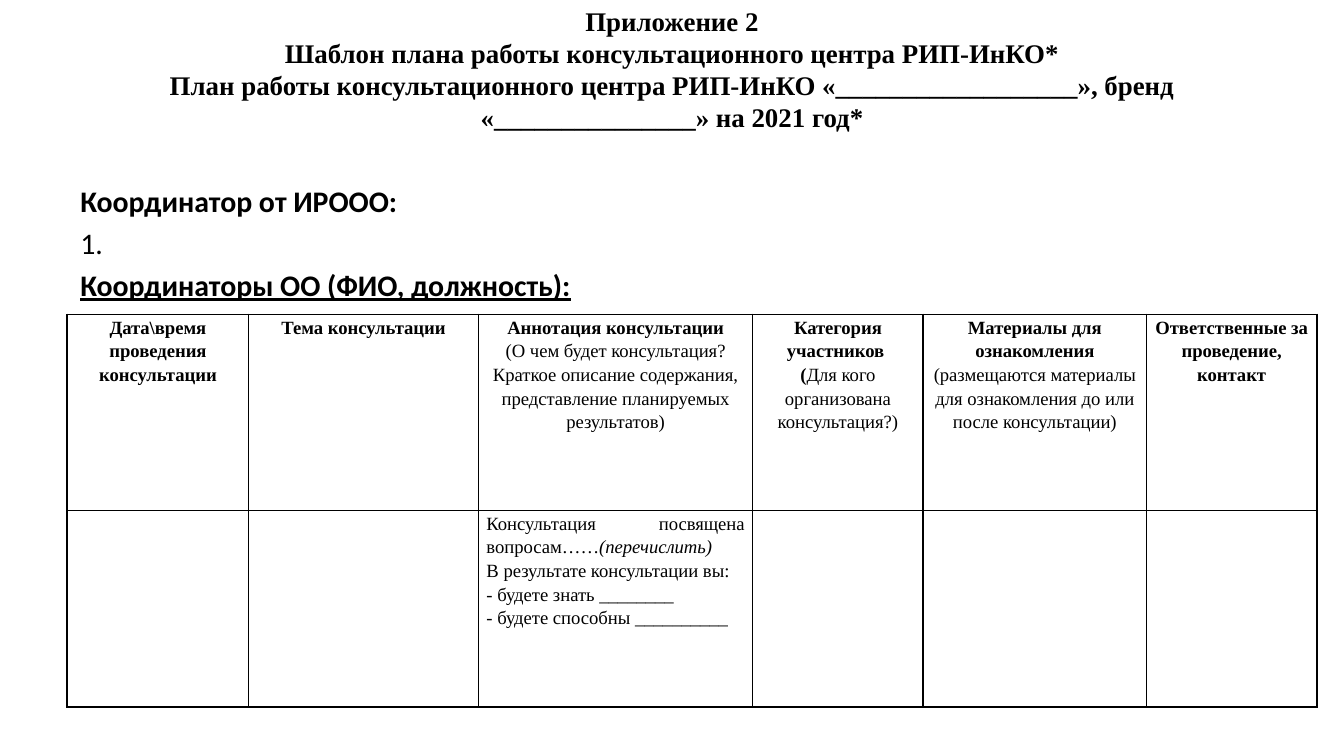
from lxml.etree import SubElement
from pptx import Presentation
from pptx.dml.color import RGBColor
from pptx.enum.text import MSO_ANCHOR, MSO_AUTO_SIZE, PP_ALIGN
from pptx.oxml.ns import qn
from pptx.util import Inches, Pt

SLIDE_WIDTH = 10
SLIDE_HEIGHT = SLIDE_WIDTH * 9 / 16
COLORS = {"text": "000000", "border": "000000"}
BOLD = {"bold": True}
PLAIN = {"bold": False}
ITALIC = {"bold": False, "italic": True}
TITLE_FONT = {"name": "Times New Roman", "size": Pt(14.4), "bold": True}
COORDINATOR_FONT = {"name": "Calibri", "size": Pt(16)}
TABLE_FONT = {"name": "Times New Roman", "size": Pt(10)}

TITLE_LINES = [
    "Приложение 2",
    " Шаблон плана работы консультационного центра РИП-ИнКО* ",
    "План работы консультационного центра РИП-ИнКО «__________________», "
    "бренд «_______________» на 2021 год*",
]
COORDINATORS = [
    [("Координатор от ИРООО:", BOLD)],
    [("1.", PLAIN)],
    [("Координаторы ОО (ФИО, должность):", {"bold": True, "underline": True})],
]
COLUMN_WIDTHS = [1.35, 1.71, 2.04, 1.27, 1.66, 1.27]
ROW_HEIGHT = 1.46
HEADERS = [
    [[("Дата\\время проведения консультации", BOLD)]],
    [[("Тема консультации", BOLD)]],
    [[("Аннотация консультации", BOLD)],
     [("(О чем будет консультация? Краткое описание содержания, "
       "представление планируемых результатов)", PLAIN)]],
    [[("Категория участников ", BOLD)],
     [("(", BOLD), ("Для кого организована консультация?)", PLAIN)]],
    [[("Материалы для ознакомления", BOLD)],
     [("(размещаются материалы для ознакомления до или после консультации)", PLAIN)]],
    [[("Ответственные за проведение, контакт", BOLD)]],
]
ANNOTATION = [
    [("Консультация посвящена вопросам……", PLAIN), ("(перечислить)", ITALIC)],
    [("В результате консультации вы:", PLAIN)],
    [("- будете знать ________", PLAIN)],
    [("- будете способны __________", PLAIN)],
]
ANNOTATION_COLUMN = 2


def set_all(target, values):
    for attribute, value in values.items():
        setattr(target, attribute, value)


def add_run(paragraph, text, font_format):
    run = paragraph.add_run()
    run.text = text
    set_all(run.font, font_format)
    run.font.color.rgb = RGBColor.from_string(COLORS["text"])


def write_paragraphs(frame, paragraphs, base_font, paragraph_format):
    for index, runs in enumerate(paragraphs):
        paragraph = frame.add_paragraph() if index else frame.paragraphs[0]
        set_all(paragraph, paragraph_format)
        for text, font_format in runs:
            add_run(paragraph, text, {**base_font, **font_format})


def write_title(title):
    set_all(title, {"left": Inches(0.5), "top": Inches(0.53),
                    "width": Inches(9), "height": Inches(0.63)})
    frame = title.text_frame
    set_all(frame, {"word_wrap": True, "auto_size": MSO_AUTO_SIZE.NONE,
                    "vertical_anchor": MSO_ANCHOR.MIDDLE})
    paragraph = frame.paragraphs[0]
    paragraph.alignment = PP_ALIGN.CENTER
    for line in TITLE_LINES:
        add_run(paragraph, line, TITLE_FONT)
        paragraph.add_line_break()
    # The tall closing line lifts the heading above the coordinators.
    SubElement(paragraph._p, qn("a:endParaRPr"), sz="4000")


def add_coordinators(slide):
    box = slide.shapes.add_textbox(Inches(0.5), Inches(1.31), Inches(9), Inches(3.71))
    box.text_frame.word_wrap = True
    write_paragraphs(box.text_frame, COORDINATORS, COORDINATOR_FONT,
                     {"space_before": Pt(3.2)})


def draw_borders(cell):
    properties = cell._tc.get_or_add_tcPr()
    for position, side in enumerate(("a:lnL", "a:lnR", "a:lnT", "a:lnB")):
        line = SubElement(properties, qn(side), w=str(Pt(1)))
        fill = SubElement(line, qn("a:solidFill"))
        SubElement(fill, qn("a:srgbClr"), val=COLORS["border"])
        properties.remove(line)
        properties.insert(position, line)


def add_plan_table(slide):
    table = slide.shapes.add_table(
        2, len(COLUMN_WIDTHS), Inches(0.5), Inches(2.34),
        Inches(sum(COLUMN_WIDTHS)), Inches(2 * ROW_HEIGHT)).table
    set_all(table, {"first_row": False, "horz_banding": False})
    for column, width in zip(table.columns, COLUMN_WIDTHS):
        column.width = Inches(width)
    for row in table.rows:
        row.height = Inches(ROW_HEIGHT)
    for cell in table.iter_cells():
        set_all(cell, {"margin_left": Inches(0.06), "margin_right": Inches(0.06),
                       "margin_top": 0, "margin_bottom": 0})
        cell.fill.background()
        draw_borders(cell)
    for column, header in enumerate(HEADERS):
        write_paragraphs(table.cell(0, column).text_frame, header, TABLE_FONT,
                         {"alignment": PP_ALIGN.CENTER, "line_spacing": 1.15})
    write_paragraphs(table.cell(1, ANNOTATION_COLUMN).text_frame, ANNOTATION, TABLE_FONT,
                     {"alignment": PP_ALIGN.JUSTIFY, "line_spacing": 1.15})


def main():
    presentation = Presentation()
    set_all(presentation, {"slide_width": Inches(SLIDE_WIDTH),
                           "slide_height": Inches(SLIDE_HEIGHT)})
    slide = presentation.slides.add_slide(presentation.slide_layouts[5])
    write_title(slide.shapes.title)
    add_coordinators(slide)
    add_plan_table(slide)
    presentation.save("out.pptx")


if __name__ == "__main__":
    main()
